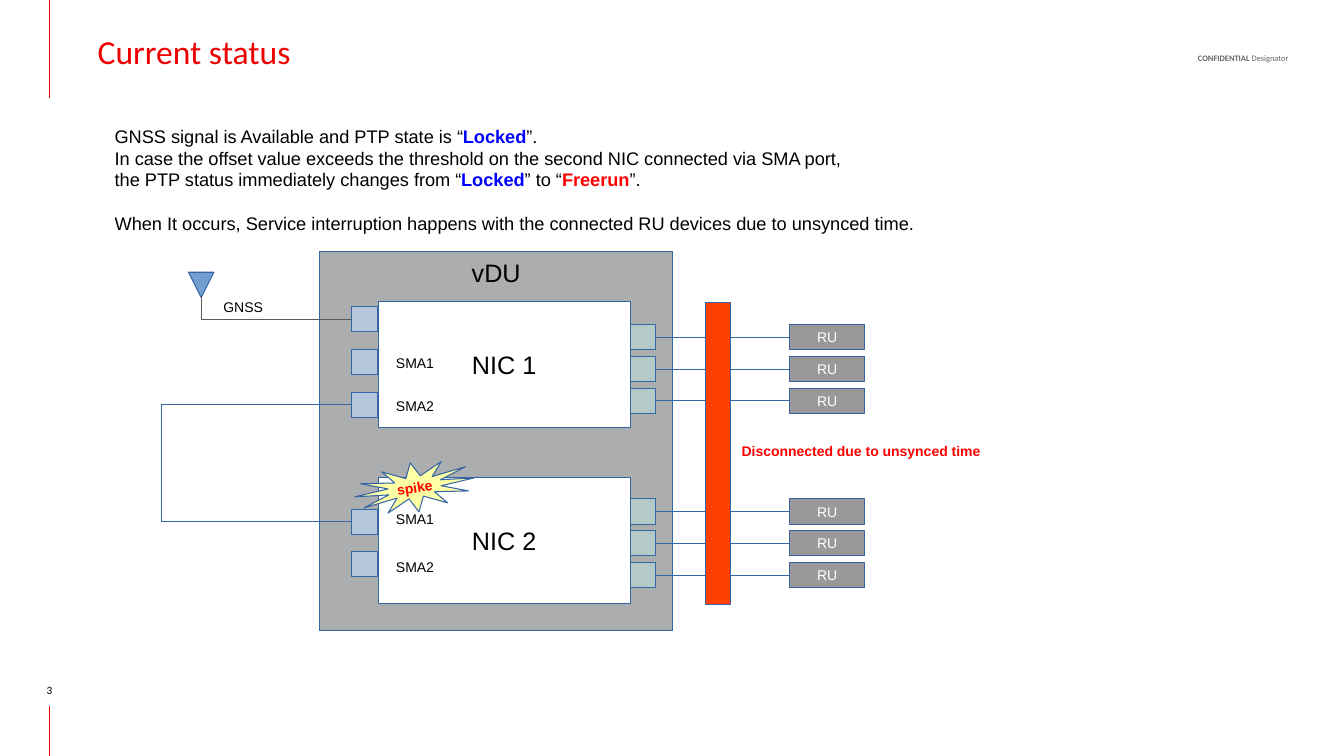
"""Build the slide on GNSS and PTP status across two NICs."""
from math import cos, radians, sin

from lxml import etree
from pptx import Presentation
from pptx.dml.color import RGBColor
from pptx.enum.shapes import MSO_CONNECTOR, MSO_SHAPE
from pptx.enum.text import MSO_ANCHOR, PP_ALIGN
from pptx.oxml.ns import qn
from pptx.util import Cm, Pt

RECT, TRIANGLE = MSO_SHAPE.RECTANGLE, MSO_SHAPE.ISOSCELES_TRIANGLE
STRAIGHT = MSO_CONNECTOR.STRAIGHT
LEFT, CENTER, RIGHT = PP_ALIGN.LEFT, PP_ALIGN.CENTER, PP_ALIGN.RIGHT
TOP, MIDDLE, BOTTOM = MSO_ANCHOR.TOP, MSO_ANCHOR.MIDDLE, MSO_ANCHOR.BOTTOM
BLACK, WHITE, RED, BLUE = "000000", "FFFFFF", "FF0000", "0000FF"
BRAND, OUTLINE = "EE0000", "3465A4"
PORT = 0.64


def paint(sp, fill, line=OUTLINE):
    sp.shadow.inherit = False
    if fill:
        sp.fill.solid()
        sp.fill.fore_color.rgb = RGBColor.from_string(fill)
    else:
        sp.fill.background()
    sp.line.color.rgb = RGBColor.from_string(line)
    sp.line.width = Pt(0.75)
    return sp


def write(sp, paragraphs, size, align=LEFT, anchor=TOP, font="Arial", inset=(0.25, 0.13)):
    tf = sp.text_frame
    tf.word_wrap = True
    tf.vertical_anchor = anchor
    tf.margin_left = tf.margin_right = Cm(inset[0])
    tf.margin_top = tf.margin_bottom = Cm(inset[1])
    for i, runs in enumerate(paragraphs):
        p = tf.add_paragraph() if i else tf.paragraphs[0]
        p.alignment = align
        for text, color, bold in runs:
            r = p.add_run()
            r.text = text
            r.font.name, r.font.size, r.font.bold = font, Pt(size), bold
            r.font.color.rgb = RGBColor.from_string(color)
    return tf


prs = Presentation()
prs.slide_width, prs.slide_height = Cm(33.87), Cm(19.05)
s = prs.slides.add_slide(prs.slide_layouts[5])
shapes = s.shapes

title = shapes.title
title.left, title.top, title.width, title.height = Cm(1.24), Cm(0.15), Cm(14.3), Cm(2.26)
tf = write(title, [[("Current status", BRAND, False)]], 24, LEFT, MIDDLE, "Calibri", (0.25, 0.25))
tf.margin_left = Cm(1.22)

connectors = []
for top, bottom in ((0, 2.46), (17.78, 19.05)):
    rule = shapes.add_connector(STRAIGHT, Cm(1.24), Cm(top), Cm(1.24), Cm(bottom))
    connectors.append((rule, BRAND))

sp = shapes.add_textbox(Cm(27.97), Cm(0.76), Cm(4.5), Cm(0.84))
tf = write(sp, [[("CONFIDENTIAL ", "666666", True), ("Designator", "666666", False)]],
           6, RIGHT, BOTTOM, "Calibri", (0, 0))
tf.paragraphs[0].line_spacing = 1.5
sp = shapes.add_textbox(Cm(0.23), Cm(17.15), Cm(2.03), Cm(0.41))
write(sp, [[("3", BLACK, False)]], 8, CENTER, BOTTOM, "Calibri", (0, 0))

status = [
    [("GNSS signal is Available and PTP state is “", BLACK, False),
     ("Locked", BLUE, True), ("”.", BLACK, False)],
    [("In case the offset value exceeds the threshold on the second NIC connected via SMA port,",
      BLACK, False)],
    [("the PTP status immediately changes from “", BLACK, False), ("Locked", BLUE, True),
     ("” to “", BLACK, False), ("Freerun", RED, True), ("”.", BLACK, False)],
    [("When It occurs, Service interruption happens with the connected RU devices "
      "due to unsynced time.", BLACK, False)],
]
sp = shapes.add_textbox(Cm(2.64), Cm(2.9), Cm(28.4), Cm(3.25))
tf = write(sp, status, 13, inset=(0.25, 0.25))
tf.paragraphs[-1].space_before = Pt(15.5)

vdu = paint(shapes.add_shape(RECT, Cm(8.06), Cm(6.35), Cm(8.89), Cm(9.53)), "ACADAE")
write(vdu, [[("vDU", BLACK, False)]], 18, CENTER)

for name, top, sma_tops, ru_top in (
    ("NIC 1", 7.59, (7.72, 8.81, 9.88), 8.18),
    ("NIC 2", 12.04, (12.83, 13.89), 12.57),
):
    nic = paint(shapes.add_shape(RECT, Cm(9.53), Cm(top), Cm(6.35), Cm(3.18)), WHITE)
    write(nic, [[(name, BLACK, False)]], 18, CENTER, MIDDLE)
    for y in sma_tops:
        paint(shapes.add_shape(RECT, Cm(8.87), Cm(y), Cm(PORT), Cm(PORT)), "B4C7DC")
    for i in range(3):
        y = ru_top + 0.8 * i
        port = paint(shapes.add_shape(RECT, Cm(15.88), Cm(y), Cm(PORT), Cm(PORT)), "B3CAC7")
        ru = paint(shapes.add_shape(RECT, Cm(19.89), Cm(y), Cm(1.91), Cm(PORT)), "999999")
        write(ru, [[("RU", WHITE, False)]], 10, CENTER, MIDDLE)
        link = shapes.add_connector(STRAIGHT, 0, 0, 0, 0)
        link.begin_connect(port, 3)
        link.end_connect(ru, 1)
        connectors.append((link, OUTLINE))

for connector, color in connectors:
    connector.line.color.rgb = RGBColor.from_string(color)
    connector.line.width = Pt(0.75)
    etree.SubElement(connector._element.spPr, qn("a:effectLst"))

for text, x, y, width, color, bold in (
    ("SMA1", 9.73, 8.81, 1.91, BLACK, False),
    ("SMA2", 9.73, 9.88, 1.91, BLACK, False),
    ("SMA1", 9.73, 12.73, 1.91, BLACK, False),
    ("SMA2", 9.73, 13.94, 1.91, BLACK, False),
    ("GNSS", 5.38, 7.39, 1.91, BLACK, False),
    ("Disconnected due to unsynced time", 18.44, 11.02, 7.67, RED, True),
):
    sp = shapes.add_textbox(Cm(x), Cm(y), Cm(width), Cm(PORT))
    write(sp, [[(text, color, bold)]], 10)

antenna = paint(shapes.add_shape(TRIANGLE, Cm(4.75), Cm(6.86), Cm(PORT), Cm(PORT)), "729FCF")
antenna.rotation = 180
antenna_cable = [(5.08, 7.47), (5.08, 8.04), (8.87, 8.04)]
sma_cable = [(8.87, 10.2), (4.06, 10.2), (4.06, 13.15), (8.87, 13.15)]
for cable, color in ((antenna_cable, "595959"), (sma_cable, OUTLINE)):
    points = [(Cm(x), Cm(y)) for x, y in cable]
    builder = shapes.build_freeform(*points[0])
    builder.add_line_segments(points[1:], close=False)
    paint(builder.convert_to_shape(), None, color)

half_burst = [(-0.11, -0.62), (0.14, -0.29), (0.67, -0.65), (0.44, -0.27),
              (1.28, -0.52), (0.65, -0.19), (1.51, -0.24), (0.67, -0.04),
              (1.36, 0.09), (0.5, 0.11), (0.83, 0.39), (0.22, 0.22)]
burst = half_burst + [(-x, -y) for x, y in half_burst]
tilt = radians(8.9)
points = [(Cm(10.45 + x * cos(tilt) - y * sin(tilt)), Cm(12.28 + x * sin(tilt) + y * cos(tilt)))
          for x, y in burst]
builder = shapes.build_freeform(*points[0])
builder.add_line_segments(points[1:], close=True)
spike = paint(builder.convert_to_shape(), "FFFFA6")
spike.rotation = 351.1
write(spike, [[("spike", RED, True)]], 10, CENTER, MIDDLE)

paint(shapes.add_shape(RECT, Cm(17.78), Cm(7.62), Cm(PORT), Cm(7.62)), "FF4000")

prs.save("out.pptx")
